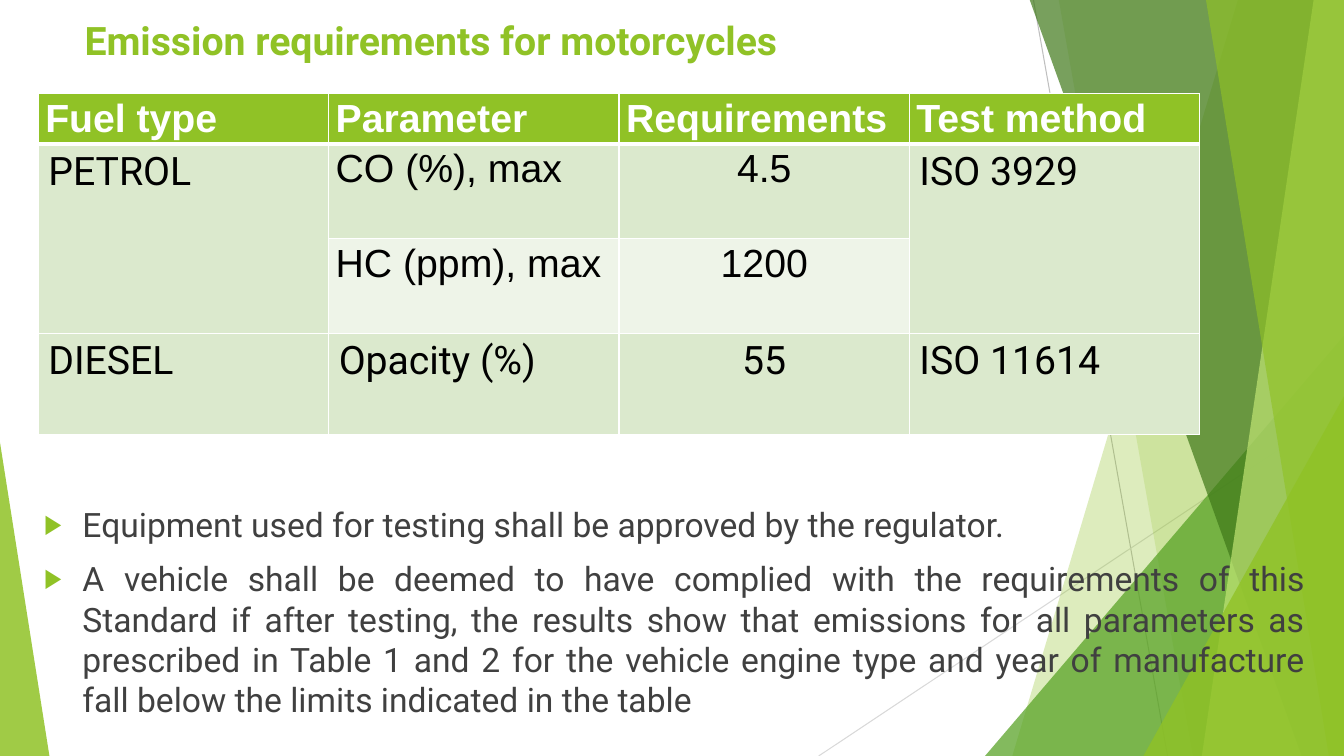
from dataclasses import dataclass

from lxml import etree
from pptx import Presentation
from pptx.dml.color import RGBColor
from pptx.enum import shapes, text
from pptx.oxml.ns import qn
from pptx.util import Inches, Pt


@dataclass(frozen=True)
class Theme:
    green: str = "90C226"
    mid_green: str = "54A021"
    dark_green: str = "3F7819"
    pale_green: str = "C0E474"
    band: str = "DBE9CD"
    light_band: str = "EEF4E8"
    white: str = "FFFFFF"
    black: str = "000000"
    body: str = "404040"
    heading_font: str = "Arial"
    text_font: str = "Roboto"
    large: int = 28
    medium: int = 24


theme = Theme()


def paint(shape, color, opacity):
    """Fill a shape with a see-through colour and remove its outline and shadow."""
    shape.shadow.inherit = False
    shape.line.fill.background()
    shape.fill.solid()
    shape.fill.fore_color.rgb = RGBColor.from_string(color)
    color_node = shape.fill._xPr.find(qn("a:solidFill"))[0]
    etree.SubElement(color_node, qn("a:alpha"), val=str(opacity * 1000))


def write(paragraph, words, **format_values):
    color = format_values.pop("color")
    run = paragraph.add_run()
    run.text = words
    for name, value in format_values.items():
        setattr(run.font, name, value)
    run.font.color.rgb = RGBColor.from_string(color)


presentation = Presentation()
presentation.slide_width = Inches(13.33)
presentation.slide_height = Inches(7.5)
slide = presentation.slides.add_slide(presentation.slide_layouts[6])

# Background: thin lines, then overlapping green facets
thin_lines = [((10.25, 0), (11.58, 7.5), "BFBFBF"), ((13.33, 4.03), (8.12, 7.5), "D9D9D9")]
for start, end, color in thin_lines:
    line = slide.shapes.add_connector(
        shapes.MSO_CONNECTOR.STRAIGHT, *[Inches(value) for value in start + end])
    line.line.color.rgb = RGBColor.from_string(color)
    line.line.width = Pt(0.75)
    etree.SubElement(line._element.spPr, qn("a:effectLst"))

# A band has a top-left x and a bottom-left x; a triangle has a box and an apex position
facets = [
    ("band", (12.28, 10.04), theme.green, 30),
    ("band", (10.5, 11.83), theme.green, 20),
    ("triangle", (9.77, 3.33, 3.56, 4.17, 1), theme.mid_green, 72),
    ("band", (10.21, 12.91), theme.dark_green, 70),
    ("band", (13.03, 11.92), theme.pale_green, 70),
    ("band", (11.96, 13.18), theme.green, 65),
    ("triangle", (11.34, 3.93, 1.99, 3.57, 1), theme.green, 80),
    ("triangle", (0, 4.39, 0.49, 3.11, 0), theme.green, 85),
]
for kind, geometry, color, opacity in facets:
    if kind == "band":
        top_x, bottom_x = geometry
        builder = slide.shapes.build_freeform(Inches(top_x), Inches(-0.01))
        corners = [(13.33, -0.01), (13.33, 7.5), (bottom_x, 7.5)]
        builder.add_line_segments([(Inches(x), Inches(y)) for x, y in corners], close=True)
        facet = builder.convert_to_shape()
    else:
        *box, apex = geometry
        facet = slide.shapes.add_shape(
            shapes.MSO_SHAPE.ISOSCELES_TRIANGLE, *[Inches(value) for value in box])
        facet.adjustments[0] = apex
    paint(facet, color, opacity)

# Title
title = slide.shapes.add_textbox(Inches(0.74), Inches(0.08), Inches(11.99), Inches(0.62))
title.text_frame.word_wrap = True
title.text_frame.vertical_anchor = text.MSO_ANCHOR.MIDDLE
write(title.text_frame.paragraphs[0], "Emission requirements for motorcycles",
      size=Pt(theme.large), name=theme.text_font, bold=True, color=theme.green)

# Bulleted notes
notes = slide.shapes.add_textbox(Inches(0.34), Inches(4.95), Inches(12.7), Inches(2.41))
notes.text_frame.word_wrap = True
note_texts = [
    "Equipment used for testing shall be approved by the regulator.",
    "A vehicle shall be deemed to have complied with the requirements of this Standard "
    "if after testing, the results show that emissions for all parameters as prescribed "
    "in Table 1 and 2 for the vehicle engine type and year of manufacture fall below the "
    "limits indicated in the table",
]
for index, note in enumerate(note_texts):
    paragraph = notes.text_frame.add_paragraph() if index else notes.text_frame.paragraphs[0]
    paragraph.alignment = text.PP_ALIGN.JUSTIFY
    paragraph.space_before = Pt(10 if index else 0)
    properties = paragraph._p.get_or_add_pPr()
    properties.set("marL", str(Inches(0.38)))
    properties.set("indent", str(Inches(-0.38)))
    bullet_color = etree.SubElement(properties, qn("a:buClr"))
    etree.SubElement(bullet_color, qn("a:srgbClr"), val=theme.green)
    etree.SubElement(properties, qn("a:buSzPct"), val="80000")
    etree.SubElement(properties, qn("a:buFont"), typeface=theme.heading_font)
    etree.SubElement(properties, qn("a:buChar"), char="▶")
    write(paragraph, note, size=Pt(theme.medium), name=theme.text_font, color=theme.body)

# Emission limits table
rows = [
    ["Fuel type", "Parameter", "Requirements", "Test method"],
    ["PETROL", "CO (%), max", "4.5", "ISO 3929"],
    ["", "HC (ppm), max", "1200", ""],
    ["DIESEL", "Opacity (%)", "55", "ISO 11614"],
]
row_heights = [0.47, 0.94, 0.94, 1.0]
row_fills = [theme.green, theme.band, theme.light_band, theme.band]
table = slide.shapes.add_table(
    4, 4, Inches(0.38), Inches(0.93), Inches(11.52), Inches(sum(row_heights))).table
for column in table.columns:
    column.width = Inches(2.88)
for row, height in zip(table.rows, row_heights):
    row.height = Inches(height)
for column_index in (0, 3):
    table.cell(1, column_index).merge(table.cell(2, column_index))

for row_index, values in enumerate(rows):
    for column_index, value in enumerate(values):
        cell = table.cell(row_index, column_index)
        is_header = row_index == 0
        is_compact = is_header or (row_index < 3 and column_index in (1, 2))
        for side in ("lnL", "lnR", "lnT", "lnB"):
            width = 3 if is_header and side == "lnB" else 1
            border = etree.SubElement(
                cell._tc.get_or_add_tcPr(), qn("a:" + side), w=str(Pt(width)))
            border_fill = etree.SubElement(border, qn("a:solidFill"))
            etree.SubElement(border_fill, qn("a:srgbClr"), val=theme.white)
        cell.fill.solid()
        cell.fill.fore_color.rgb = RGBColor.from_string(row_fills[row_index])
        paragraph = cell.text_frame.paragraphs[0]
        if is_compact:
            cell.margin_left = cell.margin_right = Inches(0.07)
            cell.margin_top = cell.margin_bottom = 0
            paragraph.line_spacing = 1.07
        if column_index == 2 and not is_header:
            paragraph.alignment = text.PP_ALIGN.CENTER
        if value:
            write(paragraph, value, size=Pt(theme.large), bold=is_header,
                  name=theme.heading_font if is_compact else theme.text_font,
                  color=theme.white if is_header else theme.black)

presentation.save("out.pptx")
